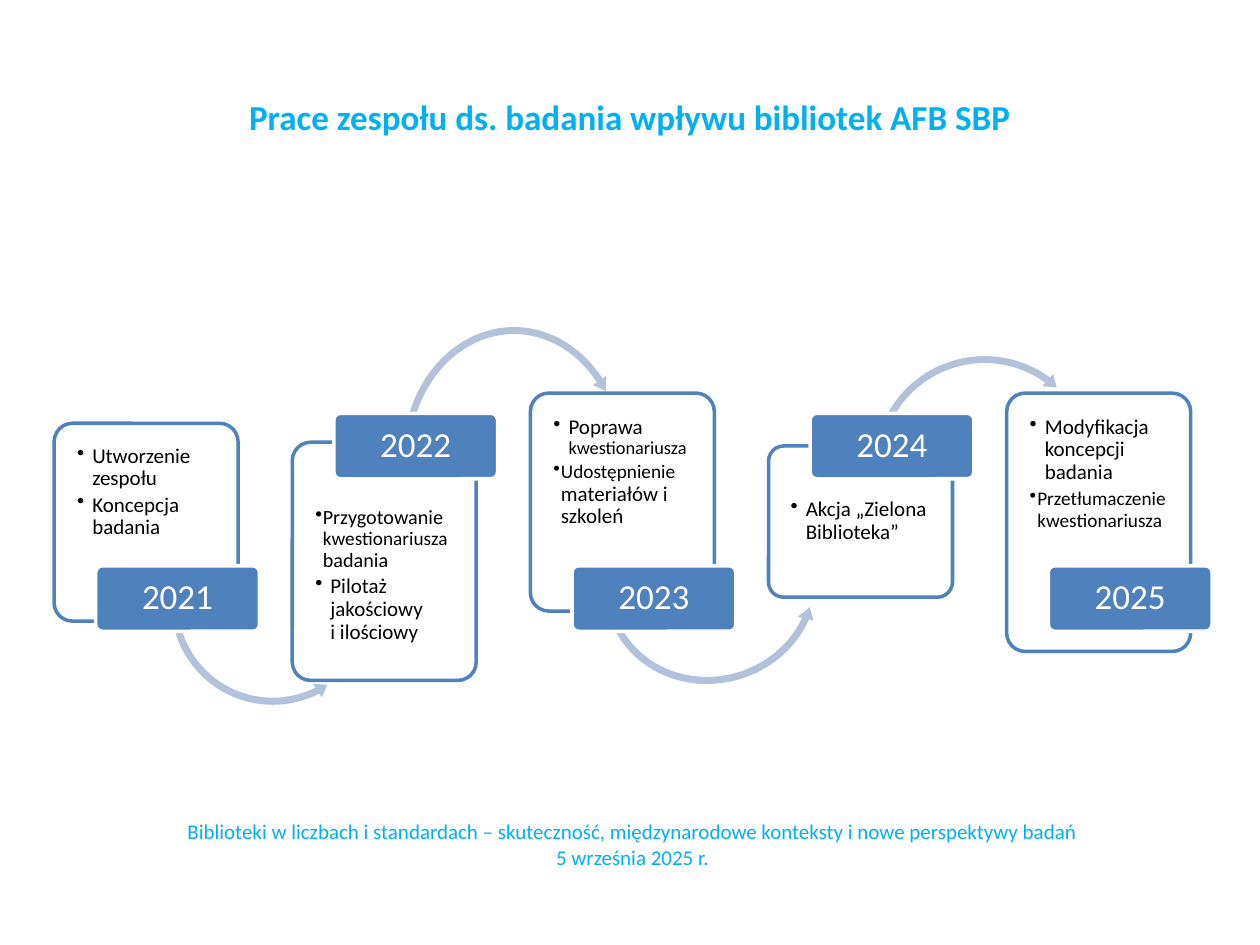
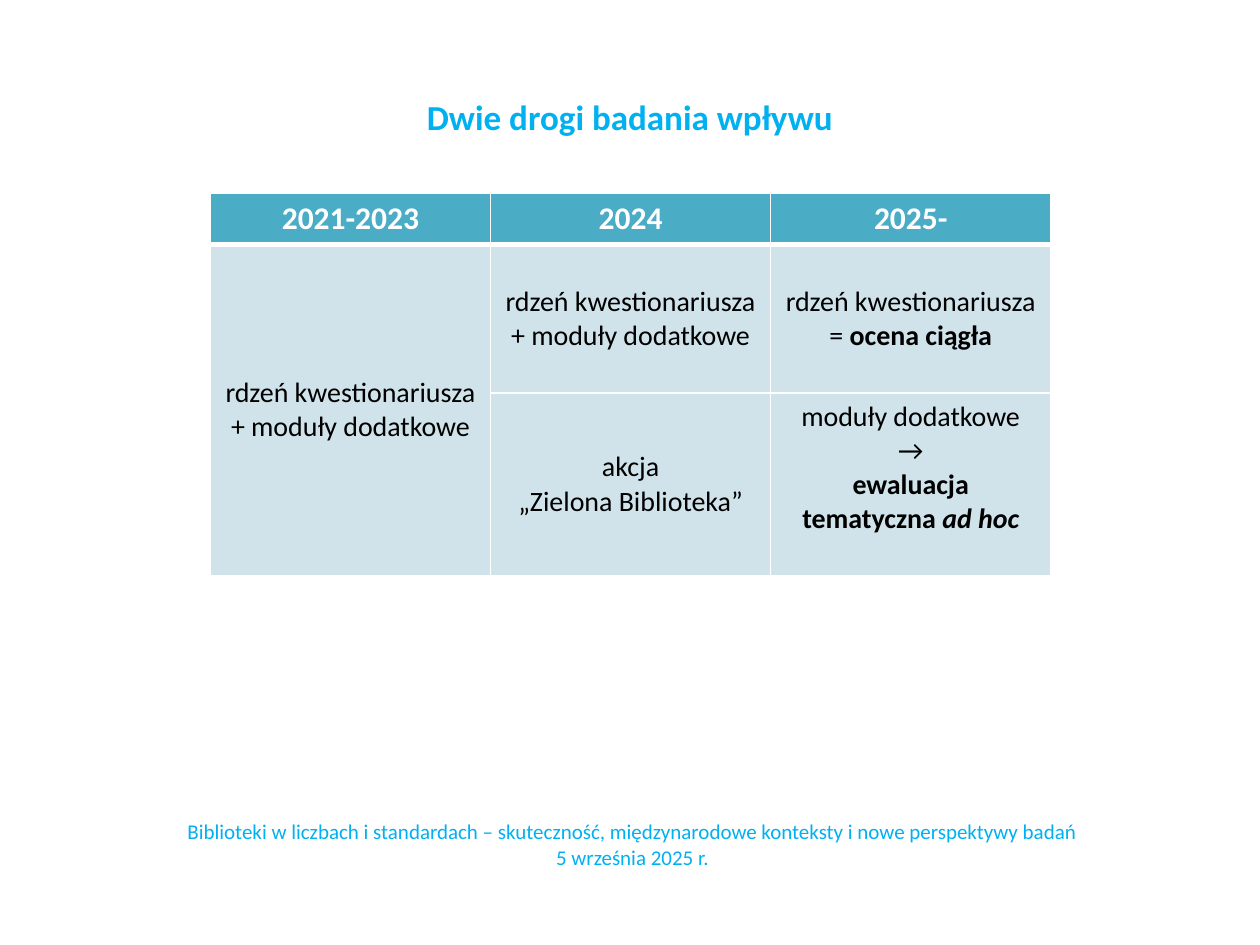
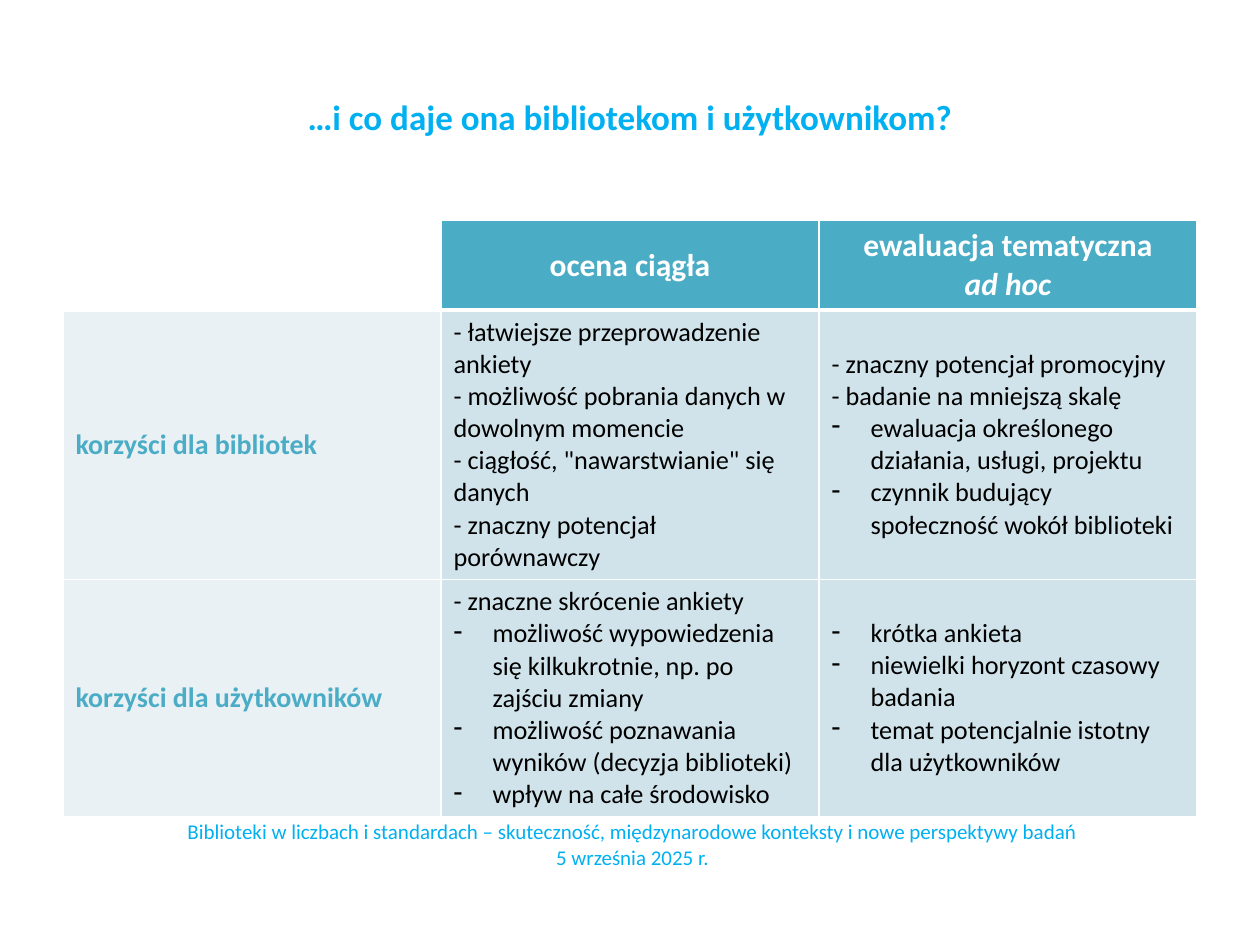
"""Build three slides on the work of a library impact study team."""
import dataclasses
import typing

import lxml.etree
import pptx
import pptx.dml.color
import pptx.enum.shapes
import pptx.enum.text
import pptx.oxml.ns
import pptx.util

Inches = pptx.util.Inches
Pt = pptx.util.Pt
RGBColor = pptx.dml.color.RGBColor
PRESET = pptx.enum.shapes.MSO_SHAPE
ANCHOR = pptx.enum.text.MSO_ANCHOR
ALIGN = pptx.enum.text.PP_ALIGN

SKY = RGBColor(0x00, 0xB0, 0xF0)
BLUE = RGBColor(0x4F, 0x81, 0xBD)
PALE_BLUE = RGBColor(0xB3, 0xC1, 0xDB)
TEAL = RGBColor(0x4B, 0xAC, 0xC6)
ICE = RGBColor(0xD0, 0xE3, 0xEA)
FROST = RGBColor(0xE9, 0xF1, 0xF5)
WHITE = RGBColor(0xFF, 0xFF, 0xFF)
BLACK = RGBColor(0x00, 0x00, 0x00)

FONT = "Calibri"
FOOTER = (
    "Biblioteki w liczbach i standardach – skuteczność, międzynarodowe konteksty"
    " i nowe perspektywy badań",
    "5 września 2025 r.",
)
STEP_LEFT, STEP_PITCH = 0.43, 1.89
PANEL_WIDTH, PANEL_PAD = 1.46, 0.14
YEAR_OFFSET, YEAR_WIDTH, YEAR_HEIGHT = 0.33, 1.3, 0.52


@dataclasses.dataclass(frozen=True)
class Span:
    """A stretch of text with the format values that differ from its style."""

    text: str
    format: dict[str, typing.Any] = dataclasses.field(default_factory=dict)


@dataclasses.dataclass(frozen=True)
class Para:
    """A paragraph with an optional hanging bullet."""

    spans: tuple[Span, ...]
    bullet: str = ""
    indent: float = 0


@dataclasses.dataclass(frozen=True)
class Style:
    """The look that the paragraphs of one text frame share."""

    size: float
    color: RGBColor
    bold: bool = False
    align: ALIGN = ALIGN.CENTER
    para_format: dict[str, typing.Any] = dataclasses.field(default_factory=dict)


@dataclasses.dataclass(frozen=True)
class Arrow:
    """A curved arrow that leads to the next step."""

    preset: PRESET
    place: tuple[float, float, float, float]
    rotation: float
    adjustments: tuple[float, ...]


@dataclasses.dataclass(frozen=True)
class Step:
    """One year of work: a panel, its year label and the arrow onwards."""

    year: str
    top: float
    height: float
    text_top: float
    year_top: float
    paras: tuple[Para, ...]
    arrow: typing.Optional[Arrow] = None


@dataclasses.dataclass(frozen=True)
class CellText:
    """The content and look of one table cell."""

    paras: tuple[Para, ...]
    style: Style
    fill: typing.Optional[RGBColor]
    bottom: float = 0.05


TITLE_STYLE = Style(20, SKY, True)
FOOTER_STYLE = Style(12, SKY)
PANEL_STYLE = Style(12, BLACK, align=ALIGN.LEFT,
                    para_format={"line_spacing": 0.9, "space_after": Pt(2)})
YEAR_STYLE = Style(20, WHITE, para_format={"line_spacing": 0.9})
HEAD_STYLE = Style(18, WHITE, True)
ROUTE_STYLE = Style(16, BLACK)
LABEL_STYLE = Style(16, TEAL, True, ALIGN.LEFT)
BENEFIT_STYLE = Style(15, BLACK, align=ALIGN.LEFT)


def sized(text: str, size: float) -> Span:
    """Return a span with its own size."""
    return Span(text, {"size": Pt(size)})


def plain(*lines: str) -> tuple[Para, ...]:
    """Return one unformatted paragraph per line."""
    return tuple(Para((Span(line),)) for line in lines)


def dotted(*spans: Span, indent: float = 0.12) -> Para:
    """Return a paragraph with a round bullet."""
    return Para(spans, "•", indent)


def dashed(*lines: str) -> tuple[Para, ...]:
    """Return one paragraph with a dash bullet per line."""
    return tuple(Para((Span(line),), "-", 0.31) for line in lines)


def apply(target: typing.Any, values: dict[str, typing.Any]) -> None:
    """Set every named attribute on the target."""
    for name, value in values.items():
        setattr(target, name, value)


def add_element(parent: typing.Any, tag: str, **attributes: str) -> typing.Any:
    """Append a drawing element to the parent."""
    return lxml.etree.SubElement(parent, pptx.oxml.ns.qn(tag), attributes)


def write(frame: typing.Any, paras: tuple[Para, ...], style: Style) -> None:
    """Write the paragraphs into a text frame."""
    for index, item in enumerate(paras):
        para = frame.add_paragraph() if index else frame.paragraphs[0]
        apply(para, {"alignment": style.align, **style.para_format})
        if item.bullet:
            properties = para._p.get_or_add_pPr()
            properties.set("marL", str(Inches(item.indent)))
            properties.set("indent", str(-Inches(item.indent)))
            add_element(properties, "a:buChar", char=item.bullet)
        for span in item.spans:
            for number, line in enumerate(span.text.split("\n")):
                if number:
                    para.add_line_break()
                run = para.add_run()
                run.text = line
                run.font.color.rgb = style.color
                apply(run.font, {"name": FONT, "size": Pt(style.size),
                                 "bold": style.bold, **span.format})


def add_text(page: typing.Any, place: tuple[float, ...], paras: tuple[Para, ...],
             style: Style) -> None:
    """Add a vertically centred text box."""
    box = page.shapes.add_textbox(*map(Inches, place))
    apply(box.text_frame, {"word_wrap": True, "vertical_anchor": ANCHOR.MIDDLE})
    write(box.text_frame, paras, style)


def add_page(deck: typing.Any, title: str) -> typing.Any:
    """Add a blank page with the shared title and footer."""
    page = deck.slides.add_slide(deck.slide_layouts[6])
    add_text(page, (0.5, 0.3, 9, 1.25), plain(title), TITLE_STYLE)
    add_text(page, (0, 6.5, 10.04, 0.4), plain(*FOOTER), FOOTER_STYLE)
    return page


def add_shape(page: typing.Any, preset: PRESET, place: tuple[float, ...],
              fill: RGBColor, line: typing.Optional[RGBColor] = None) -> typing.Any:
    """Add a filled preset shape without shadow."""
    shape = page.shapes.add_shape(preset, *map(Inches, place))
    shape.shadow.inherit = False
    shape.fill.solid()
    shape.fill.fore_color.rgb = fill
    if line is None:
        shape.line.fill.background()
    else:
        shape.line.color.rgb = line
        shape.line.width = Pt(2)
    return shape


def add_card(page: typing.Any, place: tuple[float, ...], fill: RGBColor, line: RGBColor,
             paras: tuple[Para, ...], style: Style,
             frame_format: dict[str, typing.Any]) -> None:
    """Add a rounded rectangle with text."""
    card = add_shape(page, PRESET.ROUNDED_RECTANGLE, place, fill, line)
    card.adjustments[0] = 0.1
    apply(card.text_frame, {"word_wrap": True, **frame_format})
    write(card.text_frame, paras, style)


def add_step(page: typing.Any, left: float, step: Step) -> None:
    """Add the panel, arrow and year label of one step."""
    pad = Inches(PANEL_PAD)
    add_card(page, (left, step.top, PANEL_WIDTH, step.height), WHITE, BLUE,
             step.paras, PANEL_STYLE,
             {"vertical_anchor": ANCHOR.TOP, "margin_left": pad, "margin_right": pad,
              "margin_top": Inches(step.text_top), "margin_bottom": pad})
    if step.arrow:
        arrow = add_shape(page, step.arrow.preset, step.arrow.place, PALE_BLUE)
        arrow.rotation = step.arrow.rotation
        for index, value in enumerate(step.arrow.adjustments):
            arrow.adjustments[index] = value
    add_card(page, (left + YEAR_OFFSET, step.year_top, YEAR_WIDTH, YEAR_HEIGHT),
             BLUE, WHITE, plain(step.year), YEAR_STYLE,
             {"vertical_anchor": ANCHOR.MIDDLE})


def set_borders(cell: typing.Any, top: float, bottom: float) -> None:
    """Give a cell white borders."""
    properties = cell._tc.get_or_add_tcPr()
    for side, width in {"L": 1, "R": 1, "T": top, "B": bottom}.items():
        line = add_element(properties, f"a:ln{side}", w=str(Pt(width)))
        add_element(add_element(line, "a:solidFill"), "a:srgbClr", val=str(WHITE))


def add_table(page: typing.Any, left: float, top: float, width: float,
              heights: tuple[float, ...],
              rows: list[list[typing.Optional[CellText]]]) -> None:
    """Add a table; a None cell continues the one above it."""
    table = page.shapes.add_table(len(rows), len(rows[0]), Inches(left), Inches(top),
                                  Inches(width), Inches(sum(heights))).table
    apply(table, {"first_row": False, "horz_banding": False})
    for row, height in zip(table.rows, heights):
        row.height = Inches(height)
    for row_index, row in enumerate(rows):
        for column, item in enumerate(row):
            cell = table.cell(row_index, column)
            set_borders(cell, 3 if row_index == 1 else 1, 3 if row_index == 0 else 1)
            if item is None:
                table.cell(row_index - 1, column).merge(cell)
                continue
            apply(cell, {"vertical_anchor": ANCHOR.MIDDLE,
                         "margin_bottom": Inches(item.bottom)})
            if item.fill is None:
                cell.fill.background()
            else:
                cell.fill.solid()
                cell.fill.fore_color.rgb = item.fill
            write(cell.text_frame, item.paras, item.style)


def head(*spans: Span) -> CellText:
    """Return a header cell."""
    return CellText((Para(spans),), HEAD_STYLE, TEAL)


def route(*paras: Para, bottom: float = 0.05) -> CellText:
    """Return a body cell of the study routes table."""
    return CellText(paras, ROUTE_STYLE, ICE, bottom)


def label(text: str) -> CellText:
    """Return a row label cell."""
    return CellText(plain(text), LABEL_STYLE, FROST)


def benefits(*paras: Para) -> CellText:
    """Return a body cell of the benefits table."""
    return CellText(paras, BENEFIT_STYLE, ICE)


STEPS = (
    Step("2021", 3.36, 1.57, 0.13, 4.49,
         (dotted(Span("Utworzenie zespołu")), dotted(Span("Koncepcja badania"))),
         Arrow(PRESET.LEFT_CIRCULAR_ARROW, (1.32, 3.94, 1.69, 1.69), 13.2,
               (0.033, 4.068, 29.918, 98.34, 0.038))),
    Step("2022", 3.51, 1.89, 0.47, 3.28,
         (dotted(sized("Przygotowanie ", 11.5), sized("kwestionariusza", 11),
                 sized(" badania", 11.5), indent=0.06),
          dotted(Span("Pilotaż jakościowy\ni ilościowy"))),
         Arrow(PRESET.CIRCULAR_ARROW, (3.16, 2.56, 1.84, 2.14), 0,
               (0.03, 3.706, 190.877, 122.094, 0.035))),
    Step("2023", 3.12, 1.73, 0.14, 4.49,
         (dotted(Span("Poprawa "), sized("kwestionariusza", 10.5)),
          dotted(sized("Udostępnienie ", 11), Span("materiałów i szkoleń"), indent=0.06)),
         Arrow(PRESET.LEFT_CIRCULAR_ARROW, (4.76, 3.81, 1.77, 1.65), 343.6,
               (0.034, 4.183, 21.939, 102.388, 0.039))),
    Step("2024", 3.54, 1.2, 0.38, 3.28,
         (dotted(Span("Akcja „Zielona Biblioteka”")),),
         Arrow(PRESET.CIRCULAR_ARROW, (6.9, 2.79, 1.83, 1.83), 342.1,
               (0.03, 3.728, 194.378, 125.616, 0.035))),
    Step("2025", 3.12, 2.05, 0.14, 4.49,
         (dotted(Span("Modyfikacja koncepcji badania")),
          dotted(sized("Przetłumaczenie", 11), Span(" "), sized("kwestionariusza", 11),
                 indent=0.06))),
)

BOLD = {"bold": True}
ROUTES = [
    [head(Span("2021-2023")), head(Span("2024")), head(Span("2025-"))],
    [route(*plain("rdzeń kwestionariusza\n+ moduły dodatkowe")),
     route(*plain("rdzeń kwestionariusza", "+ moduły dodatkowe")),
     route(Para((Span("rdzeń kwestionariusza = "), Span("ocena ciągła", BOLD))))],
    [None,
     route(*plain("akcja\n„Zielona Biblioteka”")),
     route(*plain("moduły dodatkowe", "→"),
           Para((Span("ewaluacja tematyczna ", BOLD),
                 Span("ad hoc", {"bold": True, "italic": True}))), bottom=0.32)],
]

BENEFITS = [
    [CellText((), HEAD_STYLE, None), head(Span("ocena ciągła")),
     head(Span("ewaluacja tematyczna\n"), Span("ad hoc", {"italic": True}))],
    [label("korzyści dla bibliotek"),
     benefits(*plain("- łatwiejsze przeprowadzenie ankiety",
                     "- możliwość pobrania danych w dowolnym momencie",
                     "- ciągłość, \"nawarstwianie\" się danych",
                     "- znaczny potencjał porównawczy")),
     benefits(*plain("- znaczny potencjał promocyjny", "- badanie na mniejszą skalę"),
              *dashed("ewaluacja określonego działania, usługi, projektu",
                      "czynnik budujący społeczność wokół biblioteki"))],
    [label("korzyści dla użytkowników"),
     benefits(*plain("- znaczne skrócenie ankiety"),
              *dashed("możliwość wypowiedzenia się kilkukrotnie, np. po zajściu zmiany",
                      "możliwość poznawania wyników (decyzja biblioteki)",
                      "wpływ na całe środowisko")),
     benefits(*dashed("krótka ankieta", "niewielki horyzont czasowy badania",
                      "temat potencjalnie istotny dla użytkowników"))],
]


def main() -> None:
    """Build and save the deck."""
    deck = pptx.Presentation()
    apply(deck, {"slide_width": Inches(10), "slide_height": Inches(7.5)})
    page = add_page(deck, "Prace zespołu ds. badania wpływu bibliotek AFB SBP")
    for index, step in enumerate(STEPS):
        add_step(page, STEP_LEFT + index * STEP_PITCH, step)
    page = add_page(deck, "Dwie drogi badania wpływu")
    add_table(page, 1.67, 1.53, 6.67, (0.41, 1.18, 1.45), ROUTES)
    page = add_page(deck, "…i co daje ona bibliotekom i użytkownikom?")
    add_table(page, 0.5, 1.75, 9, (0.71, 2.14, 1.88), BENEFITS)
    deck.save("out.pptx")


if __name__ == "__main__":
    main()
